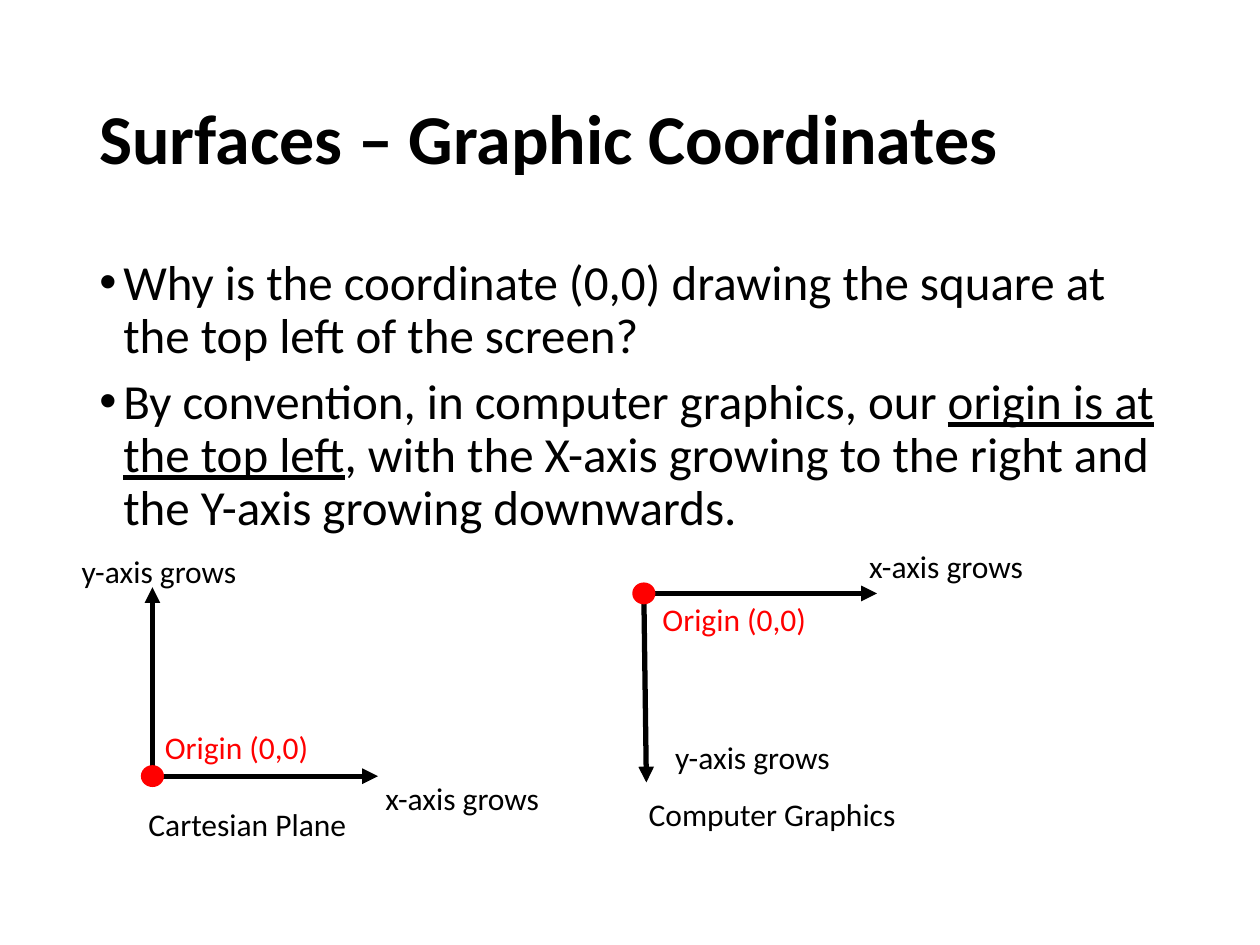
from lxml import etree
from pptx import Presentation
from pptx import util as u
from pptx.dml.color import RGBColor
from pptx.enum import shapes, text
from pptx.oxml.ns import qn

# Content: places are columns and rows of a 100 x 75 grid
TITLE = "Surfaces – Graphic Coordinates"
BULLETS = [  # runs of (text, underlined)
    [("Why is the coordinate (0,0) drawing the square at the top left of the screen?", False)],
    [("By convention, in computer graphics, our ", False),
     ("origin is at the top left", True),
     (", with the X-axis growing to the right and the Y-axis growing downwards.", False)],
]
# Axes (start, end) and labels (text, left, top, width) are offsets from the origin
PLANES = [
    dict(origin=(12.1, 61.6),
         axes=[((-0.4, 0), (17.9, 0)), ((0, 0), (0, -15))],
         labels=[("Cartesian Plane", -1.3, 1.8, 18.3),
                 ("x-axis grows", 17.5, -0.3, 14.5),
                 ("y-axis grows", -6.6, -18.3, 14.5)],
         origin_label=("Origin (0,0)", 0, -4.3, 18.3)),
    dict(origin=(51.1, 47.1),
         axes=[((0.2, 0), (18.5, 0)), ((0, 0), (0.2, 15))],
         labels=[("Computer Graphics", -0.6, 15.5, 22.9),
                 ("x-axis grows", 16.9, -4.2, 14.5),
                 ("y-axis grows", 1.5, 11, 14.5)],
         origin_label=("Origin (0,0)", 0.5, 0, 18.3)),
]
THEME = dict(font="Calibri", ink=RGBColor(0, 0, 0), accent=RGBColor(255, 0, 0),
             title=40, body=28, label=18, axis=3, outline=1)
LABEL_ROWS = 4
DOT = (1.7, 1.6)

prs = Presentation()
prs.slide_width, prs.slide_height = u.Inches(10), u.Inches(7.5)
slide = prs.slides.add_slide(prs.slide_layouts[6])
sp_tree = slide.shapes


def grid(*cells):
    return [round(c * prs.slide_width / 100) for c in cells]


def style(font, size, color, bold=False):
    font.name, font.size, font.bold = THEME["font"], u.Pt(size), bold
    font.color.rgb = color


def add_text(left, top, width, height, wrap=True):
    tf = sp_tree.add_textbox(*grid(left, top, width, height)).text_frame
    tf.word_wrap = wrap
    return tf


def add_label(origin, label, color):
    words, dx, dy, width = label
    tf = add_text(origin[0] + dx, origin[1] + dy, width, LABEL_ROWS)
    tf.auto_size = text.MSO_AUTO_SIZE.SHAPE_TO_FIT_TEXT
    tf.text = words
    style(tf.paragraphs[0].runs[0].font, THEME["label"], color)


def add_axis(origin, start, end):
    points = [o + d for offset in (start, end) for o, d in zip(origin, offset)]
    line = sp_tree.add_connector(shapes.MSO_CONNECTOR.STRAIGHT, *grid(*points))
    line.line.color.rgb = THEME["ink"]
    line.line.width = u.Pt(THEME["axis"])
    etree.SubElement(line.line._get_or_add_ln(), qn("a:tailEnd"), type="triangle")
    etree.SubElement(line._element.spPr, qn("a:effectLst"))


def add_bullet(p):
    pPr = p._p.get_or_add_pPr()
    indent = u.Inches(0.19)
    pPr.set("marL", str(indent))
    pPr.set("indent", str(-indent))
    etree.SubElement(pPr, qn("a:buFont"), typeface="Arial")
    etree.SubElement(pPr, qn("a:buChar"), char="•")


# Title
tf = add_text(6.9, 4, 86.2, 14.5)
tf.vertical_anchor = text.MSO_ANCHOR.MIDDLE
tf.text = TITLE
p = tf.paragraphs[0]
p.line_spacing = 0.9
style(p.runs[0].font, THEME["title"], THEME["ink"], bold=True)

# Bullets
tf = add_text(6.9, 20, 86.2, 47.6)
for i, runs in enumerate(BULLETS):
    p = tf.add_paragraph() if i else tf.paragraphs[0]
    add_bullet(p)
    p.line_spacing = 0.9
    if i:
        p.space_before = u.Pt(7.5)
    for words, underlined in runs:
        r = p.add_run()
        r.text = words
        style(r.font, THEME["body"], THEME["ink"])
        r.font.underline = underlined

# Coordinate planes
for plane in PLANES:
    x, y = origin = plane["origin"]
    for start, end in plane["axes"]:
        add_axis(origin, start, end)
    for label in plane["labels"]:
        add_label(origin, label, THEME["ink"])
    dot = sp_tree.add_shape(shapes.MSO_SHAPE.OVAL,
                            *grid(x - DOT[0] / 2, y - DOT[1] / 2, *DOT))
    dot.shadow.inherit = False
    dot.fill.solid()
    dot.fill.fore_color.rgb = dot.line.color.rgb = THEME["accent"]
    dot.line.width = u.Pt(THEME["outline"])
    add_label(origin, plane["origin_label"], THEME["accent"])

prs.save("out.pptx")
